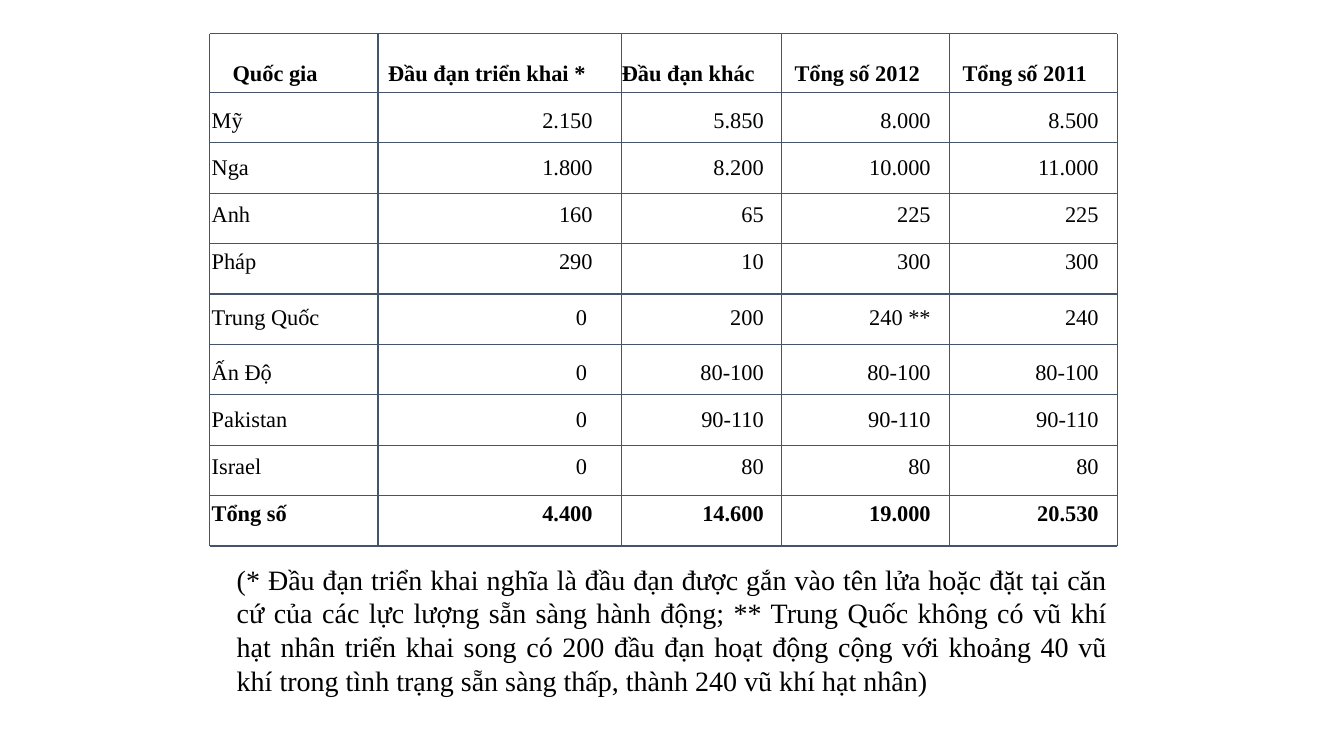
"""Build the slide with the table of nuclear warheads by country."""
from dataclasses import dataclass
from typing import Any

from lxml import etree
from pptx import Presentation
from pptx import util as u
from pptx.dml.color import RGBColor
from pptx.enum import shapes, text
from pptx.oxml import ns

PX = 9525
BLACK = RGBColor(0x00, 0x00, 0x00)
SLATE = RGBColor(0x44, 0x54, 0x6A)
FONT = "Times New Roman"
NO_STYLE_NO_GRID = "{2D5ABB26-0587-4C30-8999-92F81FD0307C}"

COLUMN_WIDTHS = [140, 242, 163, 159, 160]
ROW_HEIGHTS = [45, 44, 45, 45, 45, 61, 45, 45, 44, 45]
RULE_LEFT, RULE_RIGHT, RULE_TOP, RULE_BOTTOM = 200, 1064, 32, 520
RULE_XS = [RULE_LEFT, 360, 592, 744, 904, RULE_RIGHT]
RULE_YS = [RULE_TOP, *range(88, RULE_BOTTOM + 1, 48)]
DEPLOYED_HEADER_INDENT = 31

HEADERS = ["Quốc gia", "Đầu đạn triển khai *", "Đầu đạn khác", "Tổng số 2012", "Tổng số 2011"]
NOTE = (
    "(* Đầu đạn triển khai nghĩa là đầu đạn được gắn vào tên lửa hoặc đặt tại căn cứ "
    "của các lực lượng sẵn sàng hành động; ** Trung Quốc không có vũ khí hạt nhân "
    "triển khai song có 200 đầu đạn hoạt động cộng với khoảng 40 vũ khí trong tình "
    "trạng sẵn sàng thấp, thành 240 vũ khí hạt nhân)"
)


@dataclass(frozen=True)
class Country:
    """One table row of warhead counts."""

    name: str
    deployed: str
    other: str
    total_2012: str
    total_2011: str
    bold: bool = False

    def values(self) -> list[str]:
        """Return the cell texts from left to right."""
        return [self.name, self.deployed, self.other, self.total_2012, self.total_2011]


COUNTRIES = [
    Country("Mỹ", "2.150", "5.850", "8.000", "8.500"),
    Country("Nga", "1.800", "8.200", "10.000", "11.000"),
    Country("Anh", "160", "65", "225", "225"),
    Country("Pháp", "290", "10", "300", "300"),
    Country("Trung Quốc", "0 ", "200", "240 **", "240"),
    Country("Ấn Độ", "0 ", "80-100", "80-100", "80-100"),
    Country("Pakistan", "0 ", "90-110", "90-110", "90-110"),
    Country("Israel", "0 ", "80", "80", "80"),
    Country("Tổng số", "4.400", "14.600", "19.000", "20.530", bold=True),
]


def px(length: int) -> u.Emu:
    """Turn pixels into EMU."""
    return u.Emu(length * PX)


def write(frame: Any, content: str, *, size: int, align: Any, bold: bool = False) -> None:
    """Put one formatted paragraph into a text frame."""
    paragraph = frame.paragraphs[0]
    paragraph.alignment = align
    run = paragraph.add_run()
    run.text = content
    run.font.name = FONT
    run.font.size = u.Pt(size)
    run.font.bold = bold
    run.font.color.rgb = BLACK


def add_warhead_table(slide: Any) -> None:
    """Add the unruled table of countries and counts."""
    frame = slide.shapes.add_table(
        len(ROW_HEIGHTS), len(COLUMN_WIDTHS),
        px(192), px(48), px(sum(COLUMN_WIDTHS)), px(sum(ROW_HEIGHTS)),
    )
    table = frame.table
    table.first_row = table.horz_banding = False
    table._tbl.tblPr.find(ns.qn("a:tableStyleId")).text = NO_STYLE_NO_GRID
    for column, width in zip(table.columns, COLUMN_WIDTHS):
        column.width = px(width)
    for row, height in zip(table.rows, ROW_HEIGHTS):
        row.height = px(height)

    rows = [(HEADERS, True)] + [(country.values(), country.bold) for country in COUNTRIES]
    for row_index, (values, bold) in enumerate(rows):
        for column_index, value in enumerate(values):
            if row_index == 0:
                align = text.PP_ALIGN.CENTER
            elif column_index == 0:
                align = text.PP_ALIGN.LEFT
            else:
                align = text.PP_ALIGN.RIGHT
            cell = table.cell(row_index, column_index)
            cell.fill.background()
            cell.vertical_anchor = text.MSO_ANCHOR.MIDDLE
            write(cell.text_frame, value, size=16, align=align, bold=bold)
    table.cell(0, 1).margin_left = px(DEPLOYED_HEADER_INDENT)


def add_note(slide: Any) -> None:
    """Add the justified explanation under the table."""
    frame = slide.shapes.add_textbox(px(216), px(531), px(848), px(137)).text_frame
    frame.word_wrap = True
    frame.auto_size = text.MSO_AUTO_SIZE.SHAPE_TO_FIT_TEXT
    frame.vertical_anchor = text.MSO_ANCHOR.MIDDLE
    write(frame, NOTE, size=20, align=text.PP_ALIGN.JUSTIFY)


def add_rule(group: Any, x1: int, y1: int, x2: int, y2: int) -> None:
    """Add one thin grid line."""
    rule = group.shapes.add_connector(
        shapes.MSO_CONNECTOR.STRAIGHT, px(x1), px(y1), px(x2), px(y2)
    )
    rule.line.color.rgb = SLATE
    rule.line.width = u.Pt(0.75)
    etree.SubElement(rule._element.spPr, ns.qn("a:effectLst"))


def add_grid(slide: Any) -> None:
    """Add the grouped lines that rule the table."""
    group = slide.shapes.add_group_shape()
    for y in RULE_YS:
        add_rule(group, RULE_LEFT, y, RULE_RIGHT, y)
    for x in RULE_XS:
        add_rule(group, x, RULE_TOP, x, RULE_BOTTOM)


def main() -> None:
    """Build and save the presentation."""
    presentation = Presentation()
    presentation.slide_width, presentation.slide_height = px(1280), px(720)
    slide = presentation.slides.add_slide(presentation.slide_layouts[6])
    add_warhead_table(slide)
    add_note(slide)
    add_grid(slide)
    presentation.save("out.pptx")


if __name__ == "__main__":
    main()
